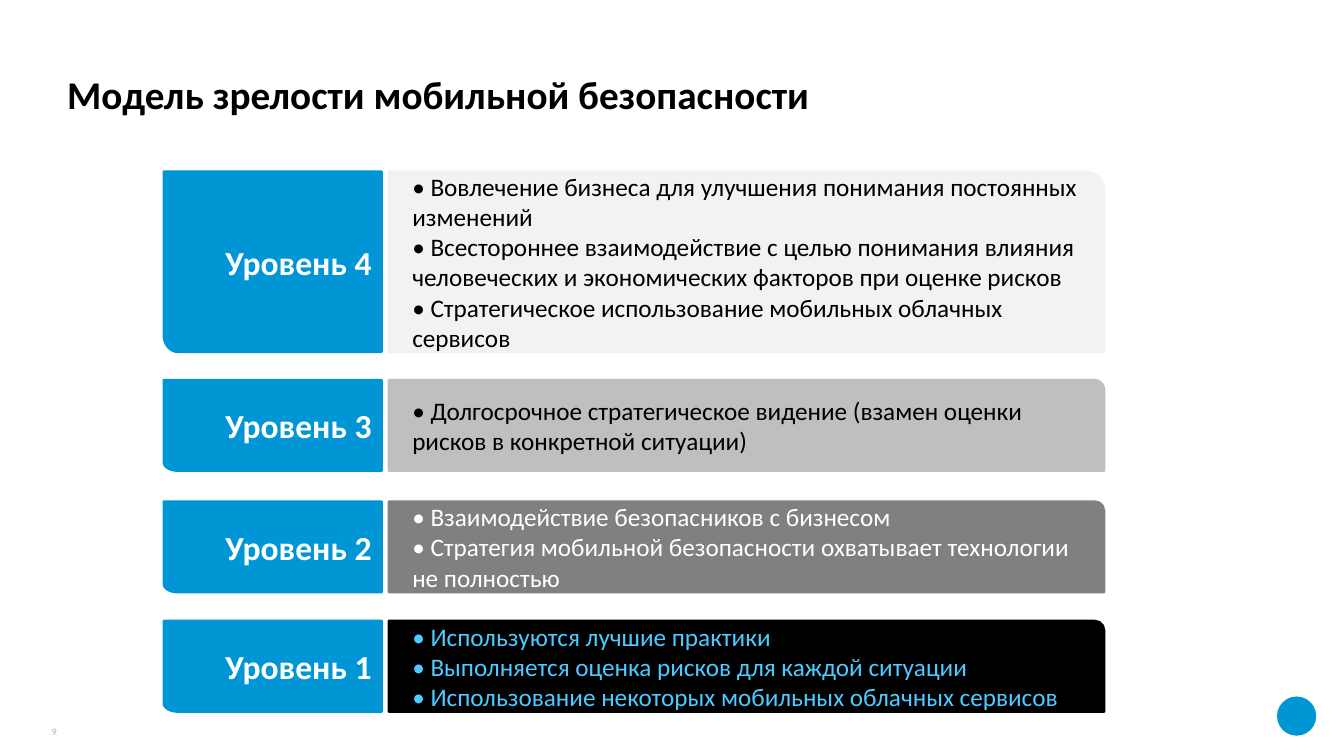
import math
from dataclasses import dataclass

from pptx import Presentation
from pptx.dml.color import RGBColor
from pptx.enum.shapes import MSO_SHAPE
from pptx.enum.text import MSO_ANCHOR, PP_ALIGN
from pptx.util import Pt

PANEL_SHAPE = MSO_SHAPE.ROUND_1_RECTANGLE
OVAL = MSO_SHAPE.OVAL
MIDDLE, BOTTOM = MSO_ANCHOR.MIDDLE, MSO_ANCHOR.BOTTOM
LEFT, RIGHT = PP_ALIGN.LEFT, PP_ALIGN.RIGHT

FONT = "Calibri"
BLUE, WHITE, BLACK = "0096D6", "FFFFFF", "000000"
LABEL_LEFT, LABEL_WIDTH = 116.9, 155.8
PANEL_LEFT, PANEL_WIDTH = 277.7, 511.1
CORNER_WIDTH, CORNER_SHARE, CORNER_STEPS = 10, 0.094, 12
NO_MARGINS = dict(margin_left=0, margin_top=0, margin_right=0, margin_bottom=0)
PANEL_MARGINS = dict(margin_left=Pt(16.8), margin_top=Pt(3.2),
                     margin_right=Pt(4.8), margin_bottom=Pt(3.2))


@dataclass
class Level:
    name: str
    top: float
    height: float
    fill: str
    text_color: str
    points: list[str]


LEVELS = [
    Level("Уровень 4", 122.4, 129, "F2F2F2", BLACK, [
        "• Вовлечение бизнеса для улучшения понимания постоянных изменений",
        "• Всестороннее взаимодействие с целью понимания влияния",
        "человеческих и экономических факторов при оценке рисков",
        "• Стратегическое использование мобильных облачных сервисов"]),
    Level("Уровень 3", 271.3, 65, "BFBFBF", BLACK, [
        "• Долгосрочное стратегическое видение (взамен оценки рисков "
        "в конкретной ситуации)"]),
    Level("Уровень 2", 358.1, 65, "808080", WHITE, [
        "• Взаимодействие безопасников с бизнесом",
        "• Стратегия мобильной безопасности охватывает технологии не полностью"]),
    Level("Уровень 1", 443.4, 65, BLACK, "4DCAFF", [
        "• Используются лучшие практики",
        "• Выполняется оценка рисков для каждой ситуации",
        "• Использование некоторых мобильных облачных сервисов"]),
]


def rgb(color: str) -> RGBColor:
    return RGBColor.from_string(color)


def paint(shape, color: str) -> None:
    shape.shadow.inherit = False
    shape.fill.solid()
    shape.fill.fore_color.rgb = rgb(color)
    shape.line.color.rgb = rgb(color)
    shape.line.width = Pt(1.5)


def write(shape, lines: list[str], size: float, color: str, bold: bool = False,
          align=LEFT, anchor=MIDDLE, spacing: float = 1.0, **margins) -> None:
    frame = shape.text_frame
    frame_format = dict(word_wrap=True, vertical_anchor=anchor, **margins)
    for attribute, value in frame_format.items():
        setattr(frame, attribute, value)
    font_format = dict(name=FONT, size=Pt(size), bold=bold)
    for index, line in enumerate(lines):
        paragraph = frame.add_paragraph() if index else frame.paragraphs[0]
        paragraph.alignment = align
        paragraph.line_spacing = spacing
        run = paragraph.add_run()
        run.text = line
        for attribute, value in font_format.items():
            setattr(run.font, attribute, value)
        run.font.color.rgb = rgb(color)


def draw_label(shapes, level: Level) -> None:
    """Rectangle with a rounded bottom-left corner."""
    right, bottom = LABEL_LEFT + LABEL_WIDTH, level.top + level.height
    corner_height = level.height * CORNER_SHARE
    angles = [math.pi / 2 * step / CORNER_STEPS for step in range(CORNER_STEPS + 1)]
    corner = [(LABEL_LEFT + CORNER_WIDTH * (1 - math.sin(angle)),
               bottom - corner_height * (1 - math.cos(angle))) for angle in angles]
    outline = [(right, level.top), (right, bottom), *corner]
    builder = shapes.build_freeform(Pt(LABEL_LEFT), Pt(level.top))
    builder.add_line_segments([(Pt(x), Pt(y)) for x, y in outline], close=True)
    label = builder.convert_to_shape()
    paint(label, BLUE)
    write(label, [level.name], 24, WHITE, bold=True, align=RIGHT)


def draw_panel(shapes, level: Level) -> None:
    panel = shapes.add_shape(PANEL_SHAPE, Pt(PANEL_LEFT), Pt(level.top),
                             Pt(PANEL_WIDTH), Pt(level.height))
    panel.adjustments[0] = 0.104
    paint(panel, level.fill)
    write(panel, level.points, 18, level.text_color, **PANEL_MARGINS)


def main() -> None:
    presentation = Presentation()
    presentation.slide_width, presentation.slide_height = Pt(960), Pt(540)
    slide = presentation.slides.add_slide(presentation.slide_layouts[5])
    shapes = slide.shapes

    # Title
    heading = shapes.title
    place = dict(left=Pt(48), top=Pt(24), width=Pt(864), height=Pt(60))
    for attribute, value in place.items():
        setattr(heading, attribute, value)
    write(heading, ["Модель зрелости мобильной безопасности"], 28, BLACK,
          bold=True, anchor=BOTTOM, spacing=0.9, **NO_MARGINS)

    # Maturity levels
    for level in LEVELS:
        draw_panel(shapes, level)
        draw_label(shapes, level)

    # Corner emblem
    emblem = shapes.add_shape(OVAL, Pt(912.2), Pt(497.5), Pt(28), Pt(28))
    paint(emblem, BLUE)
    emblem.line.fill.background()

    # Page number
    page_number = shapes.add_textbox(Pt(16.6), Pt(509.8), Pt(24), Pt(17.3))
    write(page_number, ["9"], 7, "A8B2B2", align=RIGHT, anchor=BOTTOM, **NO_MARGINS)

    presentation.save("out.pptx")


if __name__ == "__main__":
    main()
